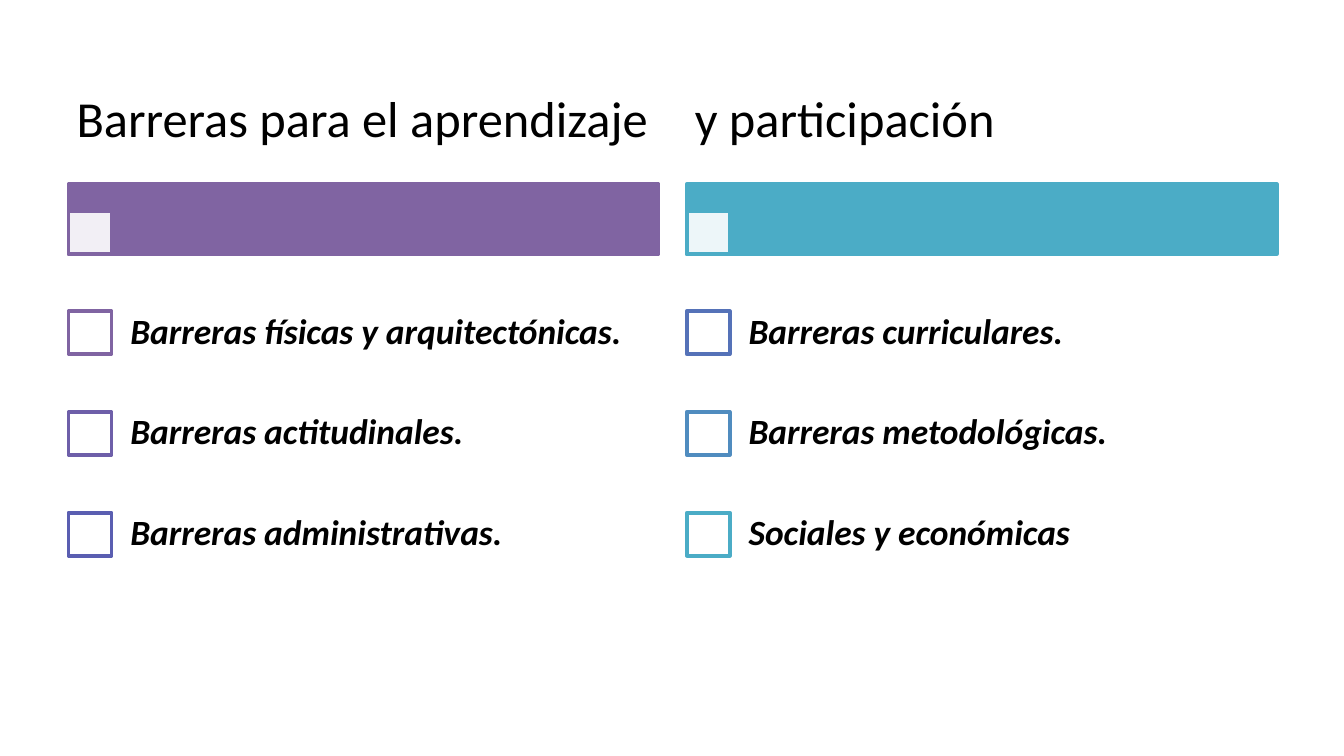
from lxml.etree import SubElement
from pptx import Presentation
from pptx.dml.color import RGBColor
from pptx.enum.shapes import MSO_SHAPE
from pptx.enum.text import MSO_ANCHOR, MSO_AUTO_SIZE, PP_ALIGN
from pptx.oxml.ns import qn
from pptx.util import Inches, Pt

COLUMN_WIDTH = 4.39
HEADING_HEIGHT = 0.93
BAR_HEIGHT = 0.52
SQUARE_SIZE = 0.32
ROW_TOP = 1.66
ROW_HEIGHT = 0.75
LABEL_INDENT = 0.31

COLUMNS = [
    (0.51, "Barreras para el aprendizaje", "8064A2", [
        ("Barreras físicas y arquitectónicas.", "8064A2"),
        ("Barreras actitudinales.", "6E5FA9"),
        ("Barreras administrativas.", "5A5EB1"),
    ]),
    (5.11, "y participación", "4BACC6", [
        ("Barreras curriculares.", "5572B8"),
        ("Barreras metodológicas.", "508CBF"),
        ("Sociales y económicas", "4BACC6"),
    ]),
]


def color(value):
    return RGBColor.from_string(value)


def add_rectangle(page, left, top, width, height, fill, line):
    shape = page.shapes.add_shape(
        MSO_SHAPE.RECTANGLE, Inches(left), Inches(top), Inches(width), Inches(height))
    shape.shadow.inherit = False
    shape.fill.solid()
    shape.fill.fore_color.rgb = color(fill)
    shape.line.color.rgb = color(line)
    shape.line.width = Pt(2)
    return shape


def set_opacity(shape, percent):
    fill_color = shape.fill._xPr.find(qn("a:solidFill"))[0]
    SubElement(fill_color, qn("a:alpha"), val=str(percent * 1000))


def write_text(box, text, size, side_inset, edge_inset, emphasis=False):
    frame = box.text_frame
    frame.word_wrap = True
    frame.auto_size = MSO_AUTO_SIZE.NONE
    frame.vertical_anchor = MSO_ANCHOR.MIDDLE
    frame.margin_left = frame.margin_right = Inches(side_inset)
    frame.margin_top = frame.margin_bottom = Inches(edge_inset)
    para = frame.paragraphs[0]
    para.alignment = PP_ALIGN.LEFT
    para.line_spacing = 0.9
    para.space_before = Pt(0)
    properties = para._p.get_or_add_pPr()
    properties.set("marL", "0")
    properties.set("indent", "0")
    SubElement(properties, qn("a:buNone"))
    span = para.add_run()
    span.text = text
    span.font.name = "Calibri"
    span.font.size = Pt(size)
    span.font.bold = span.font.italic = emphasis
    span.font.color.rgb = color("000000")


def place_heading(box, left, top, text):
    box.left, box.top = Inches(left), Inches(top)
    box.width, box.height = Inches(COLUMN_WIDTH), Inches(HEADING_HEIGHT)
    write_text(box, text, 27, 0.06, 0.04)


def add_row(page, left, top, text, line):
    square_top = top + (ROW_HEIGHT - SQUARE_SIZE) / 2
    add_rectangle(page, left, square_top, SQUARE_SIZE, SQUARE_SIZE, "FFFFFF", line)
    label = page.shapes.add_textbox(
        Inches(left + LABEL_INDENT), Inches(top),
        Inches(COLUMN_WIDTH - LABEL_INDENT), Inches(ROW_HEIGHT))
    write_text(label, text, 19, 0.15, 0.15, emphasis=True)


def add_column(page, heading_box, left, top, heading, accent, rows):
    bar_top = top + HEADING_HEIGHT
    add_rectangle(page, left, bar_top, COLUMN_WIDTH, BAR_HEIGHT, accent, accent)
    square_top = bar_top + BAR_HEIGHT - SQUARE_SIZE
    square = add_rectangle(
        page, left, square_top, SQUARE_SIZE, SQUARE_SIZE, "FFFFFF", accent)
    set_opacity(square, 90)
    place_heading(heading_box, left, top, heading)
    for index, (text, line) in enumerate(rows):
        add_row(page, left, top + ROW_TOP + index * ROW_HEIGHT, text, line)


def main():
    deck = Presentation()
    deck.slide_width = Inches(10)
    deck.slide_height = deck.slide_width * 9 // 16
    page = deck.slides.add_slide(deck.slide_layouts[1])
    heading_boxes = list(page.placeholders)
    for heading_box, (left, heading, accent, rows) in zip(heading_boxes, COLUMNS):
        add_column(page, heading_box, left, 0.44, heading, accent, rows)
    deck.save("out.pptx")


if __name__ == "__main__":
    main()
